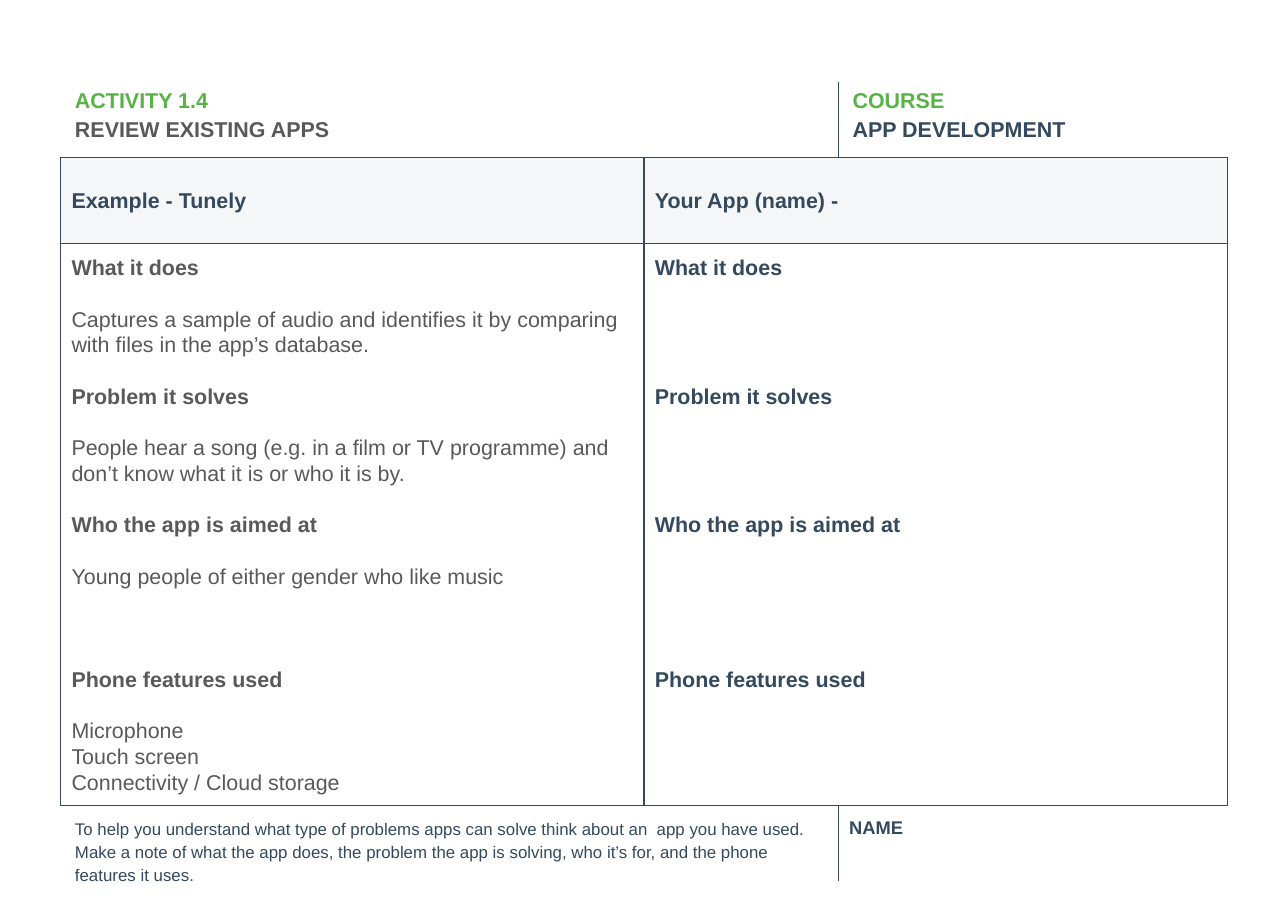
from pptx import Presentation
from pptx.dml.color import RGBColor
from pptx.enum.shapes import MSO_CONNECTOR as Connector, MSO_SHAPE as Shape
from pptx.enum.text import MSO_ANCHOR as Anchor, PP_ALIGN as Align
from pptx.oxml.ns import qn
from pptx.util import Cm, Pt
from lxml import etree

NAVY, GREEN, GREY, PALE = "34495E", "59B246", "595959", "F5F6F7"
LEFT, RIGHT, DIVIDER = 1.4, 28.3, 19.33
TOP, BOTTOM = 3.63, 18.57
BAND = 2.06
HEADING_HEIGHT = 1.98
TEXT_LINE = 16.8

EXAMPLE = [
    ("What it does", True, 0),
    ("Captures a sample of audio and identifies it by comparing with files in the app’s database.", False, 1),
    ("Problem it solves", True, 1),
    ("People hear a song (e.g. in a film or TV programme) and don’t know what it is or who it is by.", False, 1),
    ("Who the app is aimed at", True, 1),
    ("Young people of either gender who like music", False, 1),
    ("Phone features used", True, 3),
    ("Microphone", False, 1),
    ("Touch screen", False, 0),
    ("Connectivity / Cloud storage", False, 0),
]
OWN_APP = [
    ("What it does", True, 0),
    ("Problem it solves", True, 4),
    ("Who the app is aimed at", True, 4),
    ("Phone features used", True, 5),
]
GUIDANCE = (
    "To help you understand what type of problems apps can solve think about an  app you have used. "
    "Make a note of what the app does, the problem the app is solving, who it’s for, "
    "and the phone features it uses."
)


def color(value):
    return RGBColor.from_string(value)


def prepare_frame(shape, inset, anchor):
    frame = shape.text_frame
    frame.word_wrap = True
    frame.vertical_anchor = anchor
    frame.margin_left = frame.margin_right = Cm(inset)
    frame.margin_top = frame.margin_bottom = Cm(inset)
    return frame


def add_text(frame, text, size=14, ink=NAVY, bold=True, spacing=1.0, before=0):
    first = frame.paragraphs[0]
    para = frame.add_paragraph() if first.runs else first
    para.alignment = Align.LEFT
    para.line_spacing = spacing
    para.space_before = Pt(before)
    span = para.add_run()
    span.text = text
    span.font.name = "Arial"
    span.font.size = Pt(size)
    span.font.bold = bold
    span.font.color.rgb = color(ink)


def add_frame(page, box, inset=0.33, anchor=Anchor.MIDDLE):
    shape = page.shapes.add_textbox(*map(Cm, box))
    return prepare_frame(shape, inset, anchor)


def add_cell(page, box, fill=None, anchor=Anchor.TOP):
    shape = page.shapes.add_shape(Shape.RECTANGLE, *map(Cm, box))
    shape.shadow.inherit = False
    if fill:
        shape.fill.solid()
        shape.fill.fore_color.rgb = color(fill)
    else:
        shape.fill.background()
    shape.line.color.rgb = color(NAVY)
    shape.line.width = Pt(0.75)
    return prepare_frame(shape, 0.25, anchor)


def add_rule(page, *ends):
    rule = page.shapes.add_connector(Connector.STRAIGHT, *map(Cm, ends))
    rule.line.color.rgb = color(NAVY)
    rule.line.width = Pt(0.75)
    etree.SubElement(rule._element.spPr, qn("a:effectLst"))


def draw_rules(page):
    for level in (TOP, BOTTOM):
        add_rule(page, LEFT, level, RIGHT, level)
    add_rule(page, DIVIDER, BOTTOM, DIVIDER, 20.3)
    add_rule(page, DIVIDER, 1.9, DIVIDER, TOP)


def draw_title(page, box, label, title, ink):
    frame = add_frame(page, box)
    add_text(frame, label, ink=GREEN, spacing=1.15)
    add_text(frame, title, ink=ink, spacing=1.15)


def draw_column(page, box, heading, entries, ink):
    left, top, width, height = box
    body_box = (left, top + HEADING_HEIGHT, width, height - HEADING_HEIGHT)
    body = add_cell(page, body_box)
    for text, bold, gap in entries:
        add_text(body, text, ink=ink, bold=bold, before=gap * TEXT_LINE)
    header = add_cell(page, (left, top, width, HEADING_HEIGHT), PALE, Anchor.MIDDLE)
    add_text(header, heading)


def draw_footer(page, box):
    left, top, width, height = box
    guidance = add_frame(page, (left, top, DIVIDER - left, height))
    add_text(guidance, GUIDANCE, size=11, bold=False, spacing=1.15)
    name = add_frame(page, (DIVIDER, top, left + width - DIVIDER, height), 0.25, Anchor.TOP)
    add_text(name, "NAME", size=12)


def main():
    deck = Presentation()
    deck.slide_width, deck.slide_height = Cm(29.7), Cm(21)
    page = deck.slides.add_slide(deck.slide_layouts[6])
    draw_rules(page)
    title_top = TOP - BAND
    draw_title(page, (LEFT, title_top, DIVIDER - LEFT, BAND), "ACTIVITY 1.4", "REVIEW EXISTING APPS", GREY)
    draw_title(page, (DIVIDER, title_top, RIGHT - DIVIDER, BAND), "COURSE", "APP DEVELOPMENT", NAVY)
    width = (RIGHT - LEFT) / 2
    columns = [("Example - Tunely", EXAMPLE, GREY), ("Your App (name) -", OWN_APP, NAVY)]
    for index, (heading, entries, ink) in enumerate(columns):
        box = (LEFT + index * width, TOP, width, BOTTOM - TOP)
        draw_column(page, box, heading, entries, ink)
    draw_footer(page, (LEFT, BOTTOM, RIGHT - LEFT, BAND))
    deck.save("out.pptx")


if __name__ == "__main__":
    main()
